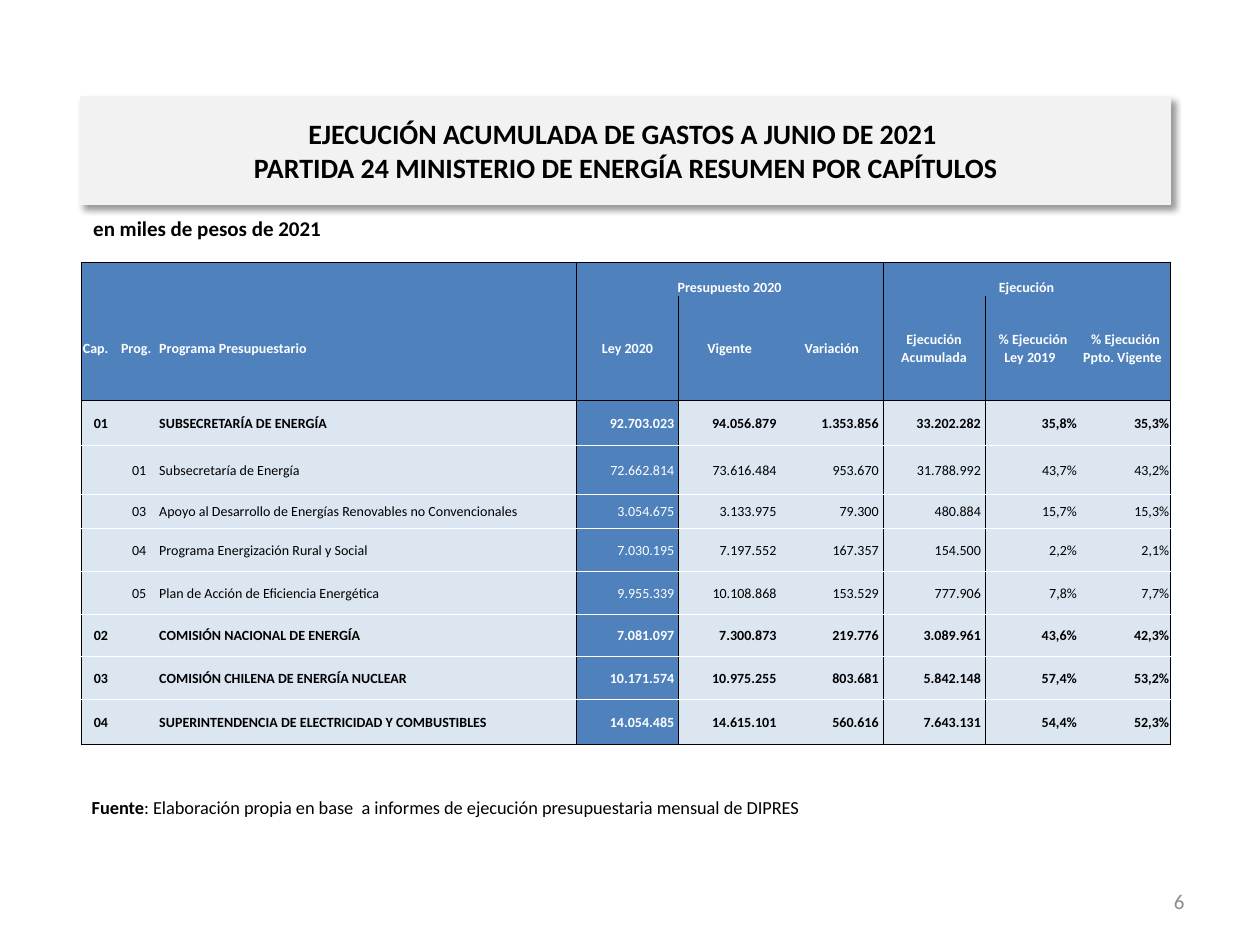
from dataclasses import dataclass

from lxml.etree import SubElement
from pptx import Presentation
from pptx.dml.color import RGBColor
from pptx.enum.text import MSO_ANCHOR, PP_ALIGN
from pptx.oxml.ns import qn
from pptx.util import Cm, Pt


@dataclass
class Theme:
    face: str = "Calibri"
    black: str = "000000"
    white: str = "FFFFFF"
    grey: str = "8C8C8C"
    panel: str = "F2F2F2"
    blue: str = "4F81BD"
    pale: str = "DCE6F1"
    title: float = 16
    label: float = 12
    note: float = 10.5
    cell: float = 8


THEME = Theme()
TITLE = ("EJECUCIÓN ACUMULADA DE GASTOS A JUNIO DE 2021 \v"
         "PARTIDA 24 MINISTERIO DE ENERGÍA RESUMEN POR CAPÍTULOS")
UNITS = "en miles de pesos de 2021"
SOURCE = [("Fuente", True),
          (": Elaboración propia en base  a informes de ejecución presupuestaria mensual de DIPRES", False)]
PAGE = "6"

GROUPS = ["", "", "", "Presupuesto 2020", "", "", "Ejecución", "", ""]
HEADS = ["Cap.", "Prog.", "Programa Presupuestario", "Ley 2020", "Vigente", "Variación",
         "Ejecución Acumulada", " % Ejecución Ley 2019 ", " % Ejecución Ppto. Vigente "]
ROWS = [
    ["01", "", "SUBSECRETARÍA DE ENERGÍA",
     "92.703.023 ", "94.056.879 ", "1.353.856 ", "33.202.282 ", "35,8%", "35,3%"],
    ["", "01", "Subsecretaría de Energía",
     "72.662.814 ", "73.616.484 ", "953.670 ", "31.788.992 ", "43,7%", "43,2%"],
    ["", "03", "Apoyo al Desarrollo de Energías Renovables no Convencionales",
     "3.054.675 ", "3.133.975 ", "79.300 ", "480.884 ", "15,7%", "15,3%"],
    ["", "04", "Programa Energización Rural y Social",
     "7.030.195 ", "7.197.552 ", "167.357 ", "154.500 ", "2,2%", "2,1%"],
    ["", "05", "Plan de Acción de Eficiencia Energética",
     "9.955.339 ", "10.108.868 ", "153.529 ", "777.906 ", "7,8%", "7,7%"],
    ["02", "", "COMISIÓN NACIONAL DE ENERGÍA",
     "7.081.097 ", "7.300.873 ", "219.776 ", "3.089.961 ", "43,6%", "42,3%"],
    ["03", "", "COMISIÓN CHILENA DE ENERGÍA NUCLEAR",
     "10.171.574 ", "10.975.255 ", "803.681 ", "5.842.148 ", "57,4%", "53,2%"],
    ["04", "", "SUPERINTENDENCIA DE ELECTRICIDAD Y COMBUSTIBLES",
     "14.054.485 ", "14.615.101 ", "560.616 ", "7.643.131 ", "54,4%", "52,3%"],
]
GRID = [GROUPS, HEADS, *ROWS]
WIDTHS = [0.77, 0.77, 8.43, 2.06, 2.06, 2.06, 2.06, 1.87, 1.86]
HEIGHTS = [0.69, 2.1, 0.91, 0.99, 0.69, 0.86, 0.86, 0.86, 0.86, 0.91]
SPAN = 3
LAW = 3
NO_STYLE = "{2D5ABB26-0587-4C30-8999-92F81FD0307C}"


def style(para, size, color, bold, align=PP_ALIGN.LEFT):
    para.alignment = align
    font = para.font
    font.name, font.size, font.bold = THEME.face, Pt(size), bold
    font.color.rgb = RGBColor.from_string(color)


def paint(fill, color):
    fill.solid()
    fill.fore_color.rgb = RGBColor.from_string(color)


def add_text(slide, box, runs, size, color, bold=None,
             align=PP_ALIGN.LEFT, anchor=MSO_ANCHOR.TOP):
    frame = slide.shapes.add_textbox(*map(Cm, box)).text_frame
    frame.word_wrap = True
    frame.vertical_anchor = anchor
    para = frame.paragraphs[0]
    style(para, size, color, bold, align)
    for text, weight in runs:
        run = para.add_run()
        run.text = text
        if weight is not None:
            run.font.bold = weight


def add_title(slide):
    shape = slide.shapes.title
    shape.left, shape.top, shape.width, shape.height = map(Cm, (1.63, 1.94, 21.97, 2.18))
    paint(shape.fill, THEME.panel)
    paint(shape.line.fill, THEME.panel)
    shape.line.width = Pt(0.75)
    effects = SubElement(shape._element.spPr, qn("a:effectLst"))
    shade = SubElement(effects, qn("a:outerShdw"), blurRad=str(Pt(4)), dist=str(Pt(3)),
                       dir="2700000", algn="tl", rotWithShape="0")
    tone = SubElement(shade, qn("a:srgbClr"), val=THEME.black)
    SubElement(tone, qn("a:alpha"), val="40000")
    frame = shape.text_frame
    frame.text = TITLE
    frame.word_wrap = True
    frame.vertical_anchor = MSO_ANCHOR.MIDDLE
    style(frame.paragraphs[0], THEME.title, THEME.black, True, PP_ALIGN.CENTER)


def add_edge(cell, side, color):
    line = SubElement(cell._tc.get_or_add_tcPr(), qn(f"a:{side}"), w=str(Pt(0.5)))
    fill = SubElement(line, qn("a:solidFill"))
    SubElement(fill, qn("a:srgbClr"), val=color)


def frame_cell(cell, row, col):
    if col % SPAN == 0:
        add_edge(cell, "lnL", THEME.black)
    if col % SPAN == SPAN - 1 or row == 0 and col >= SPAN:
        add_edge(cell, "lnR", THEME.black)
    if row != 1:
        add_edge(cell, "lnT", THEME.black if row in (0, 2) else THEME.white)
    if row != 0:
        add_edge(cell, "lnB", THEME.black if row in (1, len(GRID) - 1) else THEME.white)


def side_of(head, col):
    if head:
        return PP_ALIGN.LEFT if col < LAW else PP_ALIGN.CENTER
    if col < 2:
        return PP_ALIGN.CENTER
    return PP_ALIGN.JUSTIFY if col == 2 else PP_ALIGN.RIGHT


def fill_cell(cell, row, col):
    head = row < 2
    dark = head or col == LAW
    frame_cell(cell, row, col)
    paint(cell.fill, THEME.blue if dark else THEME.pale)
    cell.margin_left = cell.margin_right = cell.margin_top = Cm(0.02)
    cell.margin_bottom = 0
    cell.vertical_anchor = MSO_ANCHOR.BOTTOM if row == 0 else MSO_ANCHOR.MIDDLE
    cell.text = GRID[row][col]
    para = cell.text_frame.paragraphs[0]
    style(para, THEME.cell, THEME.white if dark else THEME.black,
          head or bool(GRID[row][0]), side_of(head, col))
    if not cell.text:
        SubElement(para._p, qn("a:endParaRPr"), sz=str(THEME.cell * 100))


def add_grid(slide):
    frame = slide.shapes.add_table(len(GRID), len(WIDTHS), Cm(1.65), Cm(5.28),
                                   Cm(sum(WIDTHS)), Cm(sum(HEIGHTS)))
    table = frame.table
    table.first_row = table.horz_banding = False
    table._tbl.tblPr.find(qn("a:tableStyleId")).text = NO_STYLE
    for column, width in zip(table.columns, WIDTHS):
        column.width = Cm(width)
    for line, height in zip(table.rows, HEIGHTS):
        line.height = Cm(height)
    for row in range(len(GRID)):
        for col in range(len(WIDTHS)):
            fill_cell(table.cell(row, col), row, col)
    for col in (SPAN, 2 * SPAN):
        table.cell(0, col).merge(table.cell(0, col + SPAN - 1))


def main():
    deck = Presentation()
    deck.slide_width, deck.slide_height = Cm(25.4), Cm(19.05)
    slide = deck.slides.add_slide(deck.slide_layouts[5])
    add_title(slide)
    add_text(slide, (18.21, 17.65, 5.92, 1.02), [(PAGE, None)], THEME.label, THEME.grey,
             False, PP_ALIGN.RIGHT, MSO_ANCHOR.MIDDLE)
    add_text(slide, (1.6, 15.93, 20.78, 0.79), SOURCE, THEME.note, THEME.black)
    add_text(slide, (1.63, 4.22, 20.85, 1.02), [(UNITS, None)], THEME.label, THEME.black, True)
    add_grid(slide)
    deck.save("out.pptx")


if __name__ == "__main__":
    main()
